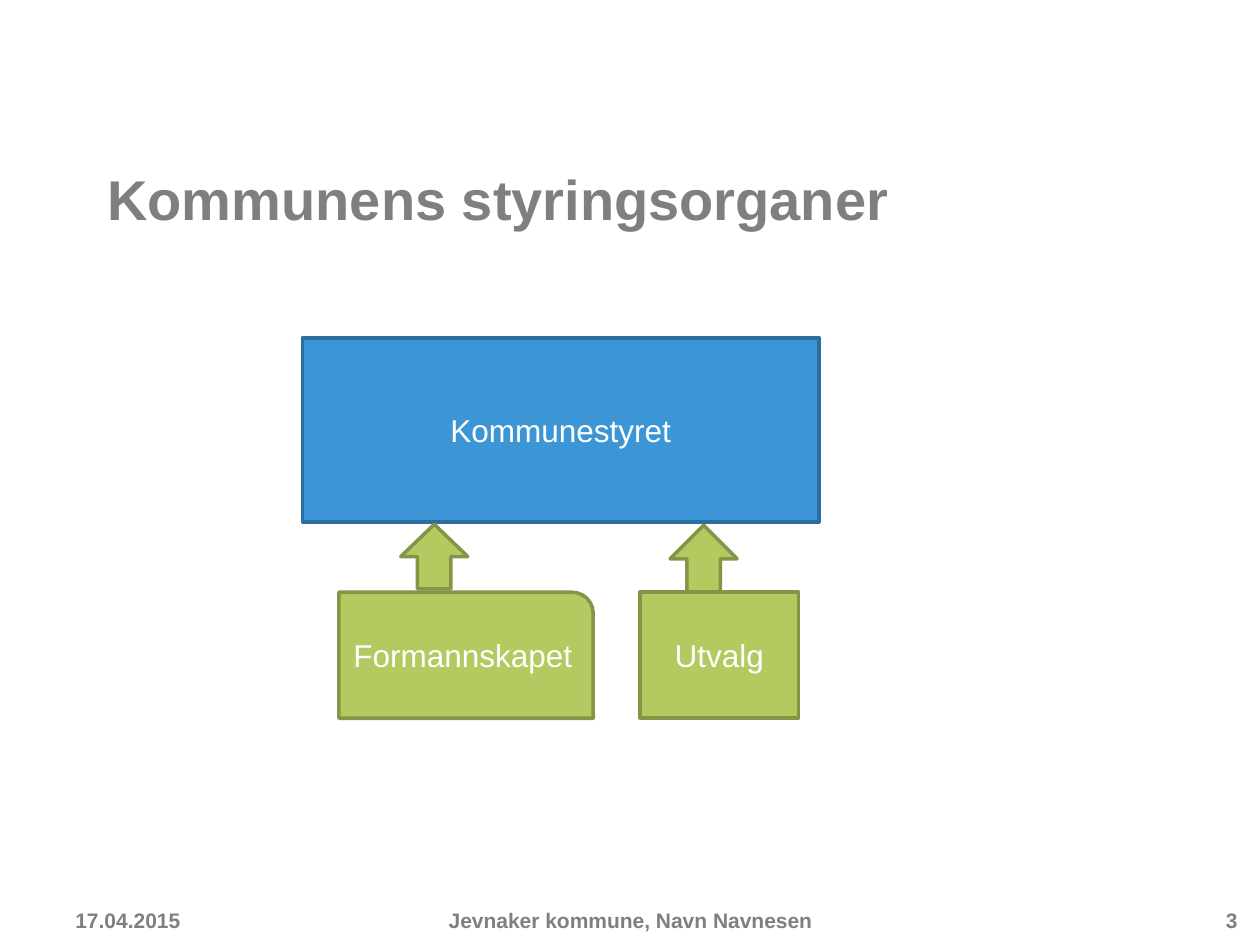
from pptx import Presentation
from pptx.dml.color import RGBColor as Rgb
from pptx.enum.shapes import MSO_SHAPE as Kind
from pptx.enum.text import MSO_ANCHOR as Anchor, MSO_AUTO_SIZE as Fit, PP_ALIGN as Align
from pptx.util import Cm, Pt

GREY, WHITE = "7F7F7F", "FFFFFF"
BLUE = ("3C96D5", "2C6F9E")
GREEN = ("B3CA60", "849547")
HEAD = {"name": "Arial", "size": Pt(32), "bold": True}
FOOT = {"name": "Arial", "size": Pt(12), "bold": True}
LABEL = {"name": "Arial", "size": Pt(18), "bold": False}


def color(code):
    return Rgb.from_string(code)


def place(item, box):
    for name, size in zip(("left", "top", "width", "height"), box):
        setattr(item, name, Cm(size))


def write(item, text, form, tone, align=Align.LEFT, anchor=Anchor.MIDDLE):
    frame = item.text_frame
    frame.text = text
    setup = {"word_wrap": True, "auto_size": Fit.NONE, "vertical_anchor": anchor}
    for name, value in setup.items():
        setattr(frame, name, value)
    line = frame.paragraphs[0]
    line.alignment = align
    for name, value in form.items():
        setattr(line.font, name, value)
    line.font.color.rgb = color(tone)


def add_title(slide, text, box):
    title = slide.shapes.title
    place(title, box)
    write(title, text, HEAD, GREY, anchor=Anchor.TOP)


def add_foot(slide, text, left, width, align):
    box = slide.shapes.add_textbox(Cm(left), Cm(18.03), Cm(width), Cm(1.02))
    write(box, text, FOOT, GREY, align)


def add_block(slide, kind, box, tones, text=None):
    block = slide.shapes.add_shape(kind, *map(Cm, box))
    fill, edge = tones
    block.shadow.inherit = False
    block.fill.solid()
    block.fill.fore_color.rgb = color(fill)
    block.line.color.rgb = color(edge)
    block.line.width = Pt(2)
    if text:
        write(block, text, LABEL, WHITE, Align.CENTER)


def main():
    deck = Presentation()
    deck.slide_width, deck.slide_height = Cm(25.4), Cm(19.05)
    slide = deck.slides.add_slide(deck.slide_layouts[5])
    add_title(slide, "Kommunens styringsorganer", (1.91, 3.18, 22.66, 2.13))

    add_foot(slide, "17.04.2015", 1.27, 3.02, Align.LEFT)
    add_foot(slide, "Jevnaker kommune, Navn Navnesen", 5.31, 14.81, Align.CENTER)
    add_foot(slide, "3", 22.91, 2.29, Align.RIGHT)

    add_block(slide, Kind.RECTANGLE, (6.1, 6.81, 10.41, 3.71), BLUE, "Kommunestyret")
    organs = (
        ("Formannskapet", Kind.ROUND_1_RECTANGLE, 6.83, 5.13, (8.08, 10.57, 1.35, 1.3)),
        ("Utvalg", Kind.RECTANGLE, 12.9, 3.2, (13.51, 10.59, 1.35, 1.37)),
    )
    for text, kind, left, width, arrow in organs:
        add_block(slide, Kind.UP_ARROW, arrow, GREEN)
        add_block(slide, kind, (left, 11.94, width, 2.54), GREEN, text)

    deck.save("out.pptx")


if __name__ == "__main__":
    main()
